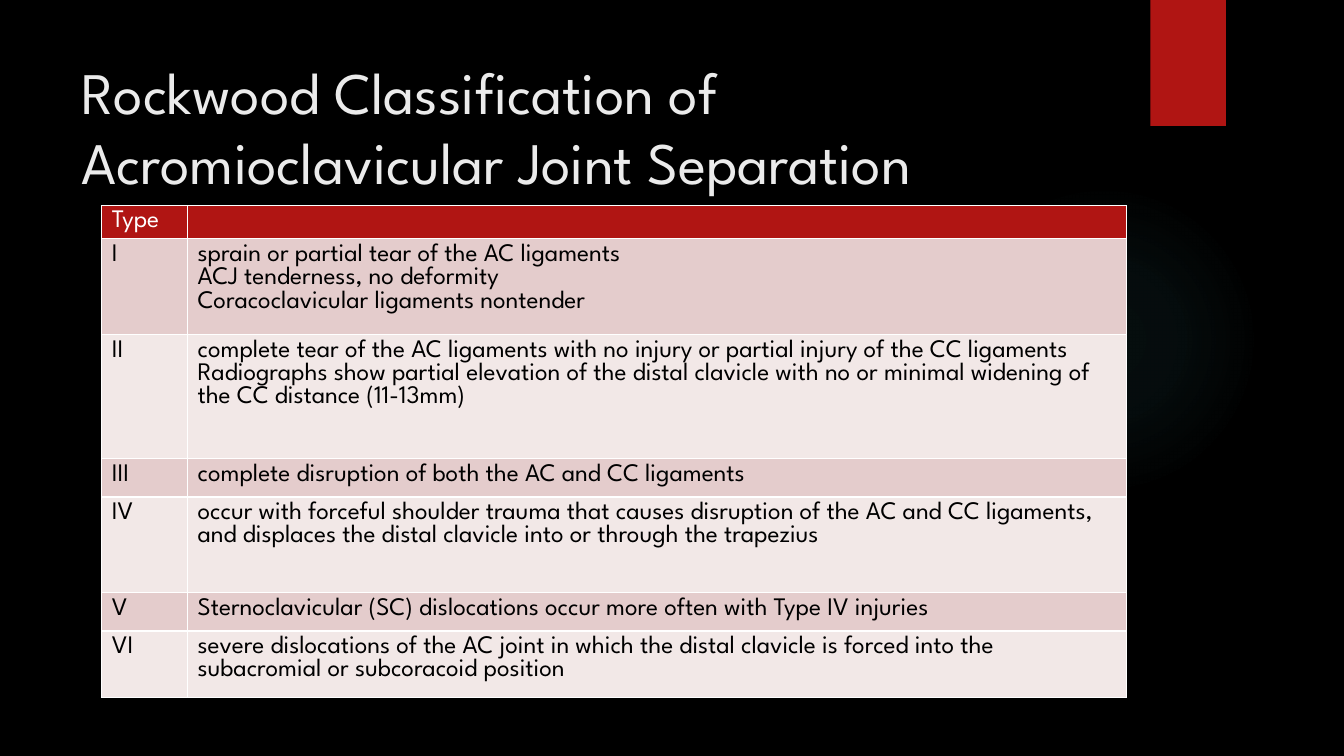
from lxml import etree
from pptx import Presentation
from pptx.dml.color import RGBColor
from pptx.enum.shapes import MSO_SHAPE
from pptx.enum.text import MSO_ANCHOR
from pptx.oxml import parse_xml
from pptx.oxml.ns import nsdecls, qn
from pptx.util import Inches, Pt

OVAL = MSO_SHAPE.OVAL
RECTANGLE = MSO_SHAPE.RECTANGLE
TOP = MSO_ANCHOR.TOP
FONT = "League Spartan"
RED = "B01513"
WHITE = "FFFFFF"
BAND_COLORS = ("E4CCCC", "F2E8E7")
GLOW_STOPS = ((0, 7), (36, 6), (69, 0))
COLUMN_WIDTHS = (0.85, 9.31)
HEADER_HEIGHT = 0.33
INJURY_TYPES = (
    ("I", 0.95, "sprain or partial tear of the AC ligaments\n"
     "ACJ tenderness, no deformity\n"
     "Coracoclavicular ligaments nontender"),
    ("II", 1.23, "complete tear of the AC ligaments with no injury or partial injury of the CC ligaments\n"
     "Radiographs show partial elevation of the distal clavicle with no or minimal widening of "
     "the CC distance (11-13mm)"),
    ("III", 0.38, "complete disruption of both the AC and CC ligaments"),
    ("IV", 0.95, "occur with forceful shoulder trauma that causes disruption of the AC and CC ligaments, "
     "and displaces the distal clavicle into or through the trapezius"),
    ("V", 0.38, "Sternoclavicular (SC) dislocations occur more often with Type IV injuries"),
    ("VI", 0.66, "severe dislocations of the AC joint in which the distal clavicle is forced into the "
     "subacromial or subcoracoid position"),
)


def color(value):
    """Return the colour for a hex string."""
    return RGBColor.from_string(value)


def paint(fill, value):
    """Give a fill one solid colour."""
    fill.solid()
    fill.fore_color.rgb = color(value)


def style_runs(paragraph, size, value):
    """Format every run of a paragraph."""
    for run in paragraph.runs:
        run.font.name = FONT
        run.font.size = Pt(size)
        run.font.color.rgb = color(value)


def add_plain_shape(slide, kind, left, top, width, height):
    """Add a preset shape without outline or shadow."""
    shape = slide.shapes.add_shape(kind, Inches(left), Inches(top), Inches(width), Inches(height))
    shape.line.fill.background()
    shape.shadow.inherit = False
    return shape


def add_backdrop(slide):
    """Paint the background, the faint glow and the red tab."""
    paint(slide.background.fill, "000000")
    glow = add_plain_shape(slide, OVAL, 9.41, 1.83, 3.08, 3.08)
    stops = "".join(
        f'<a:gs pos="{position * 1000}"><a:srgbClr val="50B9C1">'
        f'<a:alpha val="{opacity * 1000}"/></a:srgbClr></a:gs>'
        for position, opacity in GLOW_STOPS)
    gradient = parse_xml(
        f'<a:gradFill {nsdecls("a")}><a:gsLst>{stops}</a:gsLst><a:path path="circle">'
        '<a:fillToRect l="50000" t="50000" r="50000" b="50000"/></a:path></a:gradFill>')
    glow.element.spPr.find(qn("a:prstGeom")).addnext(gradient)
    tab = add_plain_shape(slide, RECTANGLE, 11.41, 0, 0.75, 1.25)
    paint(tab.fill, RED)


def add_title(slide, left, top, width, height):
    """Place the slide title at the top of its box."""
    box = slide.shapes.add_textbox(Inches(left), Inches(top), Inches(width), Inches(height))
    text_frame = box.text_frame
    text_frame.word_wrap = True
    text_frame.vertical_anchor = TOP
    text_frame.text = "Rockwood Classification of Acromioclavicular Joint Separation"
    style_runs(text_frame.paragraphs[0], 42, "EBEBEB")


def add_borders(cell):
    """Draw white lines on the four sides of a cell."""
    properties = cell._tc.get_or_add_tcPr()
    for index, side in enumerate(("lnL", "lnR", "lnT", "lnB")):
        properties.insert(index, parse_xml(
            f'<a:{side} {nsdecls("a")} w="{Pt(1)}"><a:solidFill>'
            f'<a:srgbClr val="{WHITE}"/></a:solidFill></a:{side}>'))


def fill_cell(cell, text, background, text_color, line_spacing):
    """Write and format one table cell."""
    cell.text = text
    cell.margin_bottom = 0
    paint(cell.fill, background)
    add_borders(cell)
    for paragraph in cell.text_frame.paragraphs:
        paragraph.line_spacing = line_spacing
        style_runs(paragraph, 18, text_color)
        if not text:
            ending = etree.SubElement(paragraph._p, qn("a:endParaRPr"), sz="1200")
            etree.SubElement(ending, qn("a:latin"), typeface=FONT)


def add_classification_table(slide, left, top):
    """Place the table of injury types with banded rows."""
    rows = [("Type", HEADER_HEIGHT, ""), *INJURY_TYPES]
    total_height = sum(height for _, height, _ in rows)
    frame = slide.shapes.add_table(len(rows), len(COLUMN_WIDTHS), Inches(left), Inches(top),
                                   Inches(sum(COLUMN_WIDTHS)), Inches(total_height))
    table = frame.table
    for column, width in zip(table.columns, COLUMN_WIDTHS):
        column.width = Inches(width)
    for index, (name, height, description) in enumerate(rows):
        table.rows[index].height = Inches(height)
        if index == 0:
            style = (RED, WHITE, 0.9)
        else:
            style = (BAND_COLORS[(index - 1) % 2], "000000", 1.0)
        for cell, text in zip(table.rows[index].cells, (name, description)):
            fill_cell(cell, text, *style)


def main():
    """Build the slide and save the presentation."""
    presentation = Presentation()
    presentation.slide_width = Inches(13.33)
    presentation.slide_height = Inches(7.5)
    slide = presentation.slides.add_slide(presentation.slide_layouts[6])
    add_backdrop(slide)
    add_title(slide, 0.71, 0.5, 10.29, 1.53)
    add_classification_table(slide, 1.01, 2.04)
    presentation.save("out.pptx")


if __name__ == "__main__":
    main()
